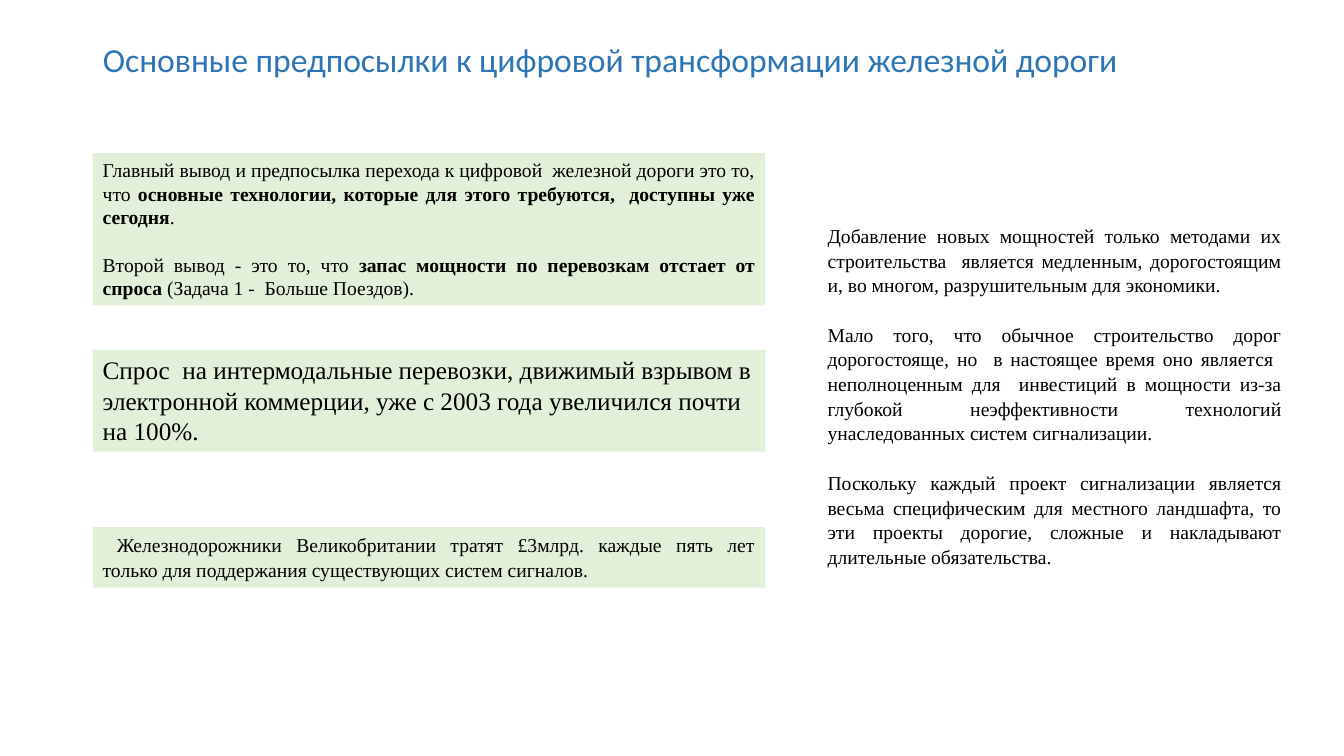
import pptx
import pptx.util
import pptx.dml.color
import pptx.enum.shapes
import pptx.enum.text
from dataclasses import dataclass
from typing import Any, Optional

Inches = pptx.util.Inches
Pt = pptx.util.Pt
Align = pptx.enum.text.PP_ALIGN
Anchor = pptx.enum.text.MSO_ANCHOR

COLORS = {"title": "2E75B6", "panel": "E2F0D9", "text": "000000"}
LEFT, WIDTH = 0.92, 6.67


@dataclass
class Panel:
    left: float
    top: float
    width: float
    height: float
    paras: list[list[str]]  # every second piece of a paragraph is bold
    fill: Optional[str] = "panel"
    size: int = 14
    align: Any = Align.JUSTIFY
    line: float = 1.0
    gap: float = 0
    indent: float = 0


PANELS = [
    Panel(LEFT, 1.52, WIDTH, 1.51, [
        ["Главный вывод и предпосылка перехода к цифровой  железной дороги это то, что ",
         "основные технологии, которые для этого требуются,  доступны уже сегодня", "."],
        ["Второй вывод - это то, что ",
         "запас мощности по перевозкам отстает от спроса",
         " (Задача 1 -  Больше Поездов)."],
    ], gap=16.9),
    Panel(LEFT, 3.47, WIDTH, 1.01, [
        ["Спрос  на интермодальные перевозки, движимый взрывом в электронной "
         "коммерции, уже с 2003 года увеличился почти на 100%."],
    ], size=18, align=Align.LEFT),
    Panel(8.11, 2.16, 4.7, 3.81, [
        ["Добавление новых мощностей только методами их строительства  является "
         "медленным, дорогостоящим и, во многом, разрушительным для экономики."],
        ["Мало того, что обычное строительство дорог дорогостояще, но  в настоящее "
         "время оно является  неполноценным для  инвестиций в мощности из-за глубокой "
         "неэффективности технологий унаследованных систем сигнализации."],
        ["Поскольку каждый проект сигнализации является весьма специфическим для "
         "местного ландшафта, то эти проекты дорогие, сложные и накладывают "
         "длительные обязательства."],
    ], fill=None, line=1.05, gap=17.7),
    Panel(LEFT, 5.23, WIDTH, 0.6, [
        ["Железнодорожники Великобритании тратят £3млрд. каждые пять лет только "
         "для поддержания существующих систем сигналов."],
    ], line=1.05, indent=0.14),
]


def color(name: str) -> Any:
    return pptx.dml.color.RGBColor.from_string(COLORS[name])


def style(para: Any, face: str, size: int, tint: str, align: Any, line: float) -> None:
    para.alignment = align
    para.line_spacing = line
    para.font.name = face
    para.font.size = Pt(size)
    para.font.color.rgb = color(tint)


def draw_title(slide: Any, text: str) -> None:
    title = slide.shapes.title
    title.left, title.top = Inches(LEFT), Inches(0.07)
    title.width, title.height = Inches(11.5), Inches(1.45)
    frame = title.text_frame
    frame.text = text
    frame.vertical_anchor = Anchor.MIDDLE
    frame.margin_bottom = Inches(0.42)
    style(frame.paragraphs[0], "Calibri", 24, "title", Align.LEFT, 0.9)


def draw_panel(slide: Any, panel: Panel) -> None:
    area = [Inches(n) for n in (panel.left, panel.top, panel.width, panel.height)]
    if panel.fill:
        box = slide.shapes.add_shape(pptx.enum.shapes.MSO_SHAPE.RECTANGLE, *area)
        box.shadow.inherit = False
        box.fill.solid()
        box.fill.fore_color.rgb = color(panel.fill)
        box.line.fill.background()
    else:
        box = slide.shapes.add_textbox(*area)
    frame = box.text_frame
    frame.word_wrap = True
    frame.vertical_anchor = Anchor.TOP
    for row, parts in enumerate(panel.paras):
        para = frame.add_paragraph() if row else frame.paragraphs[0]
        for col, text in enumerate(parts):
            run = para.add_run()
            run.text = text
            if col % 2:
                run.font.bold = True
        if row:
            para.space_before = Pt(panel.gap)
        if panel.indent:
            para._p.get_or_add_pPr().set("indent", str(Inches(panel.indent)))
        style(para, "Times New Roman", panel.size, "text", panel.align, panel.line)


def main() -> None:
    deck = pptx.Presentation()
    deck.slide_width, deck.slide_height = Inches(13.33), Inches(7.5)
    # Title-only layout
    slide = deck.slides.add_slide(deck.slide_layouts[5])
    draw_title(slide, "Основные предпосылки к цифровой трансформации железной дороги")
    # Green theses and the plain column on the right
    for panel in PANELS:
        draw_panel(slide, panel)
    deck.save("out.pptx")


if __name__ == "__main__":
    main()
